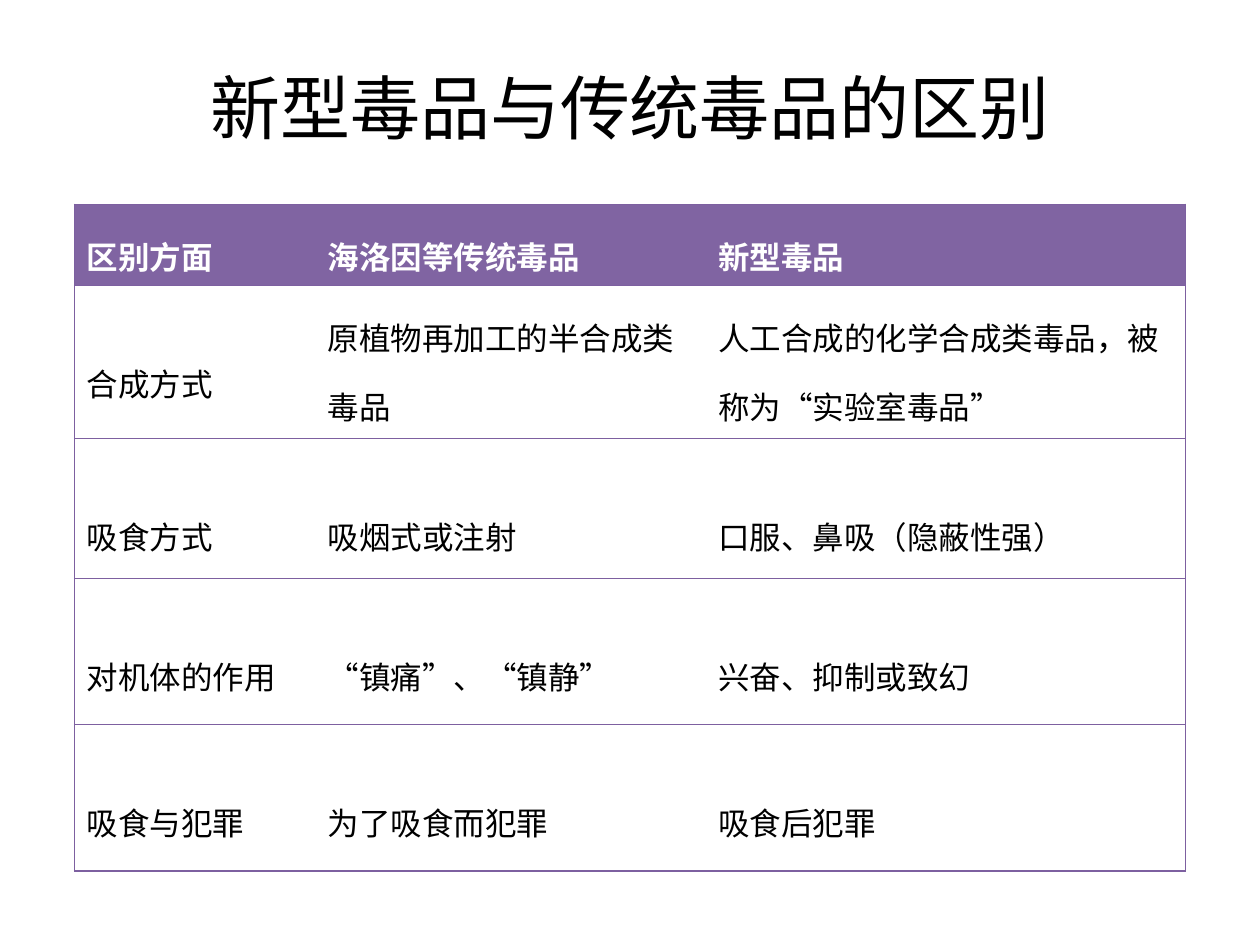
"""Build a slide that compares new and traditional drugs in a ruled table."""
from dataclasses import dataclass
from typing import Any

from lxml import etree
from pptx import Presentation
from pptx import util as u
from pptx.dml import color
from pptx.enum import text
from pptx.oxml import ns


@dataclass(frozen=True)
class Theme:
    font: str = "Noto Sans CJK SC"
    purple: str = "8064A2"
    rule: str = "7D60A0"
    black: str = "000000"
    white: str = "FFFFFF"
    title_size: int = 40
    cell_size: int = 18
    rule_width: float = 0.75


@dataclass(frozen=True)
class Row:
    height: float
    cells: tuple[str, str, str]
    lowered: tuple[bool, bool, bool] = (True, True, True)
    header: bool = False


THEME = Theme()
COLUMN_WIDTHS = (1.91, 3.1, 3.81)
TOP_MARGIN, LOWERED_MARGIN = 0.05, 0.41
ROWS = (
    Row(0.64, ("区别方面", "海洛因等传统毒品", "新型毒品"), (False, False, False), True),
    Row(1.22, ("合成方式", "原植物再加工的半合成类毒品", "人工合成的化学合成类毒品，被称为“实验室毒品”"),
        (True, False, False)),
    Row(1.11, ("吸食方式", "吸烟式或注射", "口服、鼻吸（隐蔽性强）")),
    Row(1.16, ("对机体的作用", "“镇痛”、“镇静”", "兴奋、抑制或致幻")),
    Row(1.16, ("吸食与犯罪", "为了吸食而犯罪", "吸食后犯罪")),
)


def set_attributes(target: Any, values: dict[str, Any]) -> None:
    """Set every named attribute on the target."""
    for name, value in values.items():
        setattr(target, name, value)


def write_text(frame: Any, words: str, size: int, colour: str, bold: bool,
               paragraph_format: dict[str, Any]) -> None:
    """Write one formatted paragraph into a text frame."""
    paragraph = frame.paragraphs[0]
    set_attributes(paragraph, paragraph_format)
    run = paragraph.add_run()
    run.text = words
    set_attributes(run.font, {"name": THEME.font, "size": u.Pt(size), "bold": bold})
    run.font.color.rgb = color.RGBColor.from_string(colour)
    east_asian = etree.SubElement(run.font._element, ns.qn("a:ea"))
    east_asian.set("typeface", THEME.font)


def rule_cell(cell: Any, sides: dict[str, bool]) -> None:
    """Draw the chosen sides of a cell and clear the others."""
    properties = cell._tc.get_or_add_tcPr()
    for side, drawn in sides.items():
        line = etree.SubElement(properties, ns.qn(f"a:ln{side}"))
        line.set("w", str(u.Pt(THEME.rule_width)))
        if drawn:
            fill = etree.SubElement(line, ns.qn("a:solidFill"))
            etree.SubElement(fill, ns.qn("a:srgbClr")).set("val", THEME.rule)
        else:
            etree.SubElement(line, ns.qn("a:noFill"))


def add_title(slide: Any, words: str) -> None:
    """Place and fill the title placeholder."""
    title = slide.shapes.title
    set_attributes(title, {"left": u.Inches(0.5), "top": u.Inches(0.47),
                           "width": u.Inches(9), "height": u.Inches(0.83)})
    title.text_frame.vertical_anchor = text.MSO_ANCHOR.MIDDLE
    write_text(title.text_frame, words, THEME.title_size, THEME.black, False,
               {"alignment": text.PP_ALIGN.CENTER, "line_spacing": 0.9})


def fill_row(table: Any, index: int, row: Row) -> None:
    """Fill one table row with text, rules and background."""
    table.rows[index].height = u.Inches(row.height)
    last = len(row.cells) - 1
    for column, (words, lowered) in enumerate(zip(row.cells, row.lowered)):
        cell = table.cell(index, column)
        rule_cell(cell, {"L": column == 0, "R": column == last, "T": True, "B": True})
        top = LOWERED_MARGIN if lowered else TOP_MARGIN
        set_attributes(cell, {"margin_left": u.Inches(0.1), "margin_right": u.Inches(0.1),
                              "margin_top": u.Inches(top), "margin_bottom": u.Inches(0.05),
                              "vertical_anchor": text.MSO_ANCHOR.TOP})
        if row.header:
            cell.fill.solid()
            cell.fill.fore_color.rgb = color.RGBColor.from_string(THEME.purple)
        else:
            cell.fill.background()
        write_text(cell.text_frame, words, THEME.cell_size,
                   THEME.white if row.header else THEME.black, row.header,
                   {"alignment": text.PP_ALIGN.LEFT, "line_spacing": 1.5})


def add_comparison(slide: Any, rows: tuple[Row, ...]) -> None:
    """Add the comparison table."""
    frame = slide.shapes.add_table(
        len(rows), len(COLUMN_WIDTHS), u.Inches(0.59), u.Inches(1.62),
        u.Inches(sum(COLUMN_WIDTHS)), u.Inches(sum(row.height for row in rows)))
    table = frame.table
    table.horz_banding = False
    for column, width in zip(table.columns, COLUMN_WIDTHS):
        column.width = u.Inches(width)
    for index, row in enumerate(rows):
        fill_row(table, index, row)


def main() -> None:
    """Build and save the presentation."""
    presentation = Presentation()
    set_attributes(presentation, {"slide_width": u.Inches(10), "slide_height": u.Inches(7.5)})
    slide = presentation.slides.add_slide(presentation.slide_layouts.get_by_name("Title Only"))
    add_title(slide, "新型毒品与传统毒品的区别")
    add_comparison(slide, ROWS)
    presentation.save("out.pptx")


if __name__ == "__main__":
    main()
